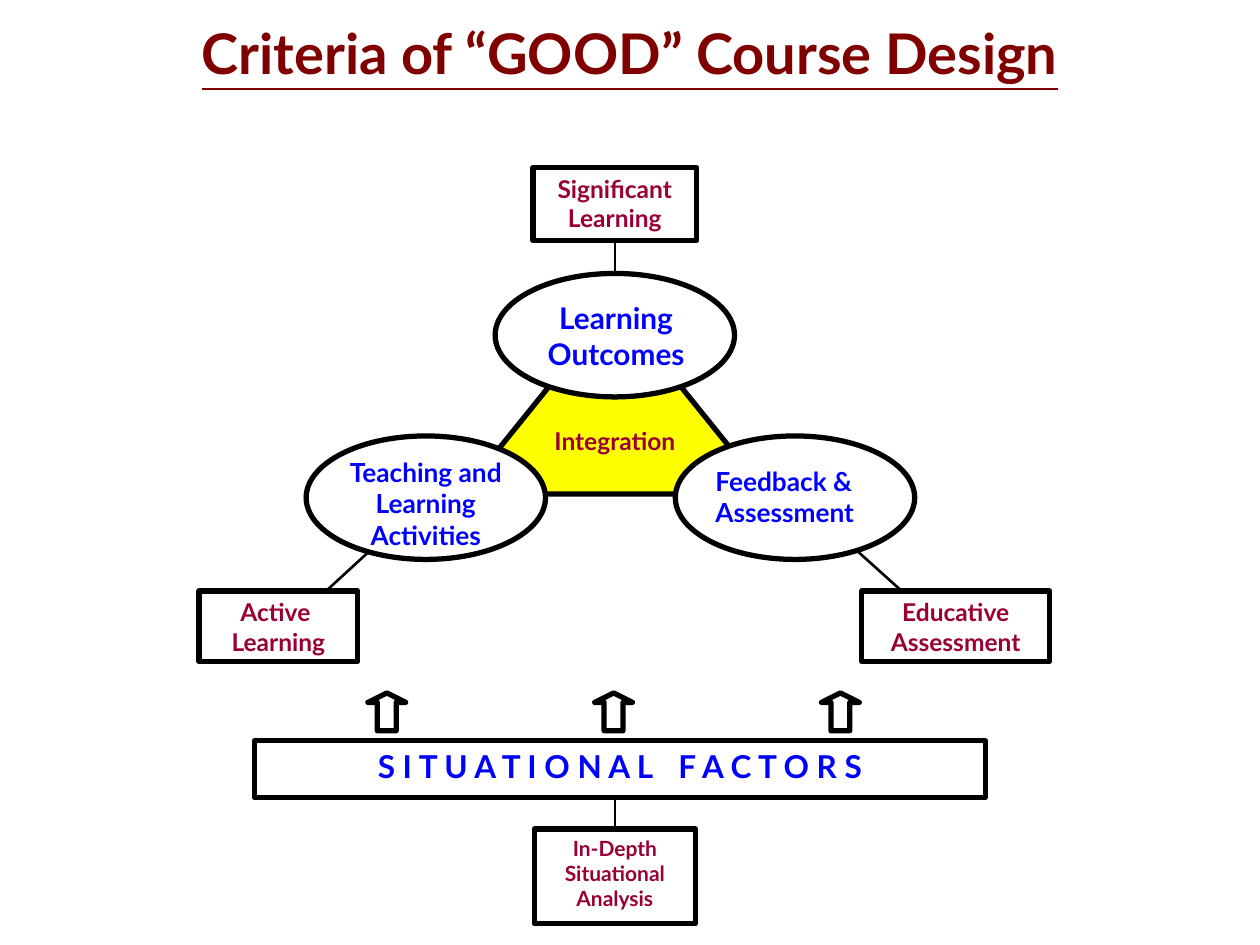
from lxml.etree import SubElement
from pptx import Presentation
from pptx.dml.color import RGBColor
from pptx.enum.shapes import MSO_CONNECTOR, MSO_SHAPE as SHAPE
from pptx.enum.text import MSO_ANCHOR as ANCHOR, PP_ALIGN as ALIGN
from pptx.oxml.ns import qn
from pptx.util import Pt

EMU_PER_PX = 9144
BLACK, WHITE, YELLOW = "000000", "FFFFFF", "FFFF00"
BLUE, CRIMSON, MAROON = "0000FF", "990033", "800000"


def px(*lengths):
    return [length * EMU_PER_PX for length in lengths]


def paint(color_format, color):
    color_format.rgb = RGBColor.from_string(color)


def write(shape, *lines, size, color, align=ALIGN.CENTER, underline=None, word_gap=0):
    frame = shape.text_frame
    frame.word_wrap = True
    frame.vertical_anchor = ANCHOR.TOP
    for index, line in enumerate(lines):
        paragraph = frame.paragraphs[0] if index == 0 else frame.add_paragraph()
        paragraph.alignment = align
        for part in [line] if isinstance(line, str) else line:
            run = paragraph.add_run()
            run.text = part
            font = run.font
            font.name, font.size, font.bold = "Lato", Pt(size), True
            font.underline = underline
            paint(font.color, color)
            if word_gap and part == " ":
                run._r.get_or_add_rPr().set("spc", str(word_gap * 100))


def outline(shapes, kind, box, fill=WHITE):
    shape = shapes.add_shape(kind, *px(*box))
    shape.shadow.inherit = False
    shape.fill.solid()
    paint(shape.fill.fore_color, fill)
    paint(shape.line.color, BLACK)
    shape.line.width = Pt(3)
    return shape


def label(shapes, box, *lines, **style):
    write(shapes.add_textbox(*px(*box)), *lines, **style)


def link(shapes, start, end, width=1.5):
    line = shapes.add_connector(MSO_CONNECTOR.STRAIGHT, *px(*start, *end))
    paint(line.line.color, BLACK)
    line.line.width = Pt(width)
    SubElement(line._element.spPr, qn("a:effectLst"))
    return line


def integration(shapes, x, y):
    outline(shapes, SHAPE.ISOSCELES_TRIANGLE, (x, y, 242, 150), YELLOW)
    label(shapes, (x + 50, y + 91, 142, 33), "Integration", size=14, color=CRIMSON)


def criterion(shapes, x, y, topic, topic_box, tag, tag_box, link_ends=None,
              size=15, align=ALIGN.CENTER):
    def place(box):
        return (x + box[0], y + box[1], *box[2:])

    if link_ends:
        link(shapes, *map(place, link_ends))
    tag_rect = outline(shapes, SHAPE.RECTANGLE, place(tag_box))
    write(tag_rect, *tag, size=14, color=CRIMSON)
    group = shapes.add_group_shape()
    oval = outline(group.shapes, SHAPE.OVAL, (x, y, 190, 98))
    label(group.shapes, place(topic_box), *topic, size=size, color=BLUE, align=align)
    if not link_ends:
        stem = link(shapes, (x + 95, y - 26), (x + 95, y))
        stem.begin_connect(tag_rect, 2)
        stem.end_connect(oval, 0)


def situational_factors(shapes, x, y):
    bar = outline(shapes, SHAPE.RECTANGLE, (x, y, 580, 45))
    words = (" ".join("SITUATIONAL"), " ", " ".join("FACTORS"))
    write(bar, words, size=18, color=BLUE, word_gap=10)
    for column in range(3):
        arrow_box = (x + 90 + 180 * column, y - 38, 30, 30)
        arrow = outline(shapes, SHAPE.UP_ARROW, arrow_box)
        arrow.adjustments[0], arrow.adjustments[1] = 0.5, 0.25
    analysis = outline(shapes, SHAPE.RECTANGLE, (x + 222, y + 70, 128, 75))
    write(analysis, "In-Depth Situational Analysis", size=12, color=CRIMSON)
    stem = link(shapes, (x + 286, y + 45), (x + 286, y + 70), 0.75)
    stem.end_connect(analysis, 0)


def main():
    deck = Presentation()
    deck.slide_width, deck.slide_height = px(1000, 750)
    shapes = deck.slides.add_slide(deck.slide_layouts[6]).shapes

    label(shapes, (106, 10, 788, 73), "Criteria of “GOOD” Course Design",
          size=32, color=MAROON, underline=True)
    integration(shapes, 367, 242)
    criterion(shapes, 393, 217, ["Learning Outcomes"], (15, 16, 162, 71),
              ["Significant", "Learning"], (30, -84, 130, 58), size=17)
    criterion(shapes, 536, 346, ["Feedback &", "Assessment"], (22, 18, 150, 53),
              ["Educative", "Assessment"], (148, 123, 149, 56),
              ((144, 91), (194, 136)), align=ALIGN.LEFT)
    criterion(shapes, 243, 346, ["Teaching and", "Learning", "Activities"],
              (10, 11, 170, 68), ["Active ", "Learning"], (-85, 123, 126, 56),
              ((54, 88), (5, 133)))
    situational_factors(shapes, 202, 588)
    deck.save("out.pptx")


if __name__ == "__main__":
    main()
